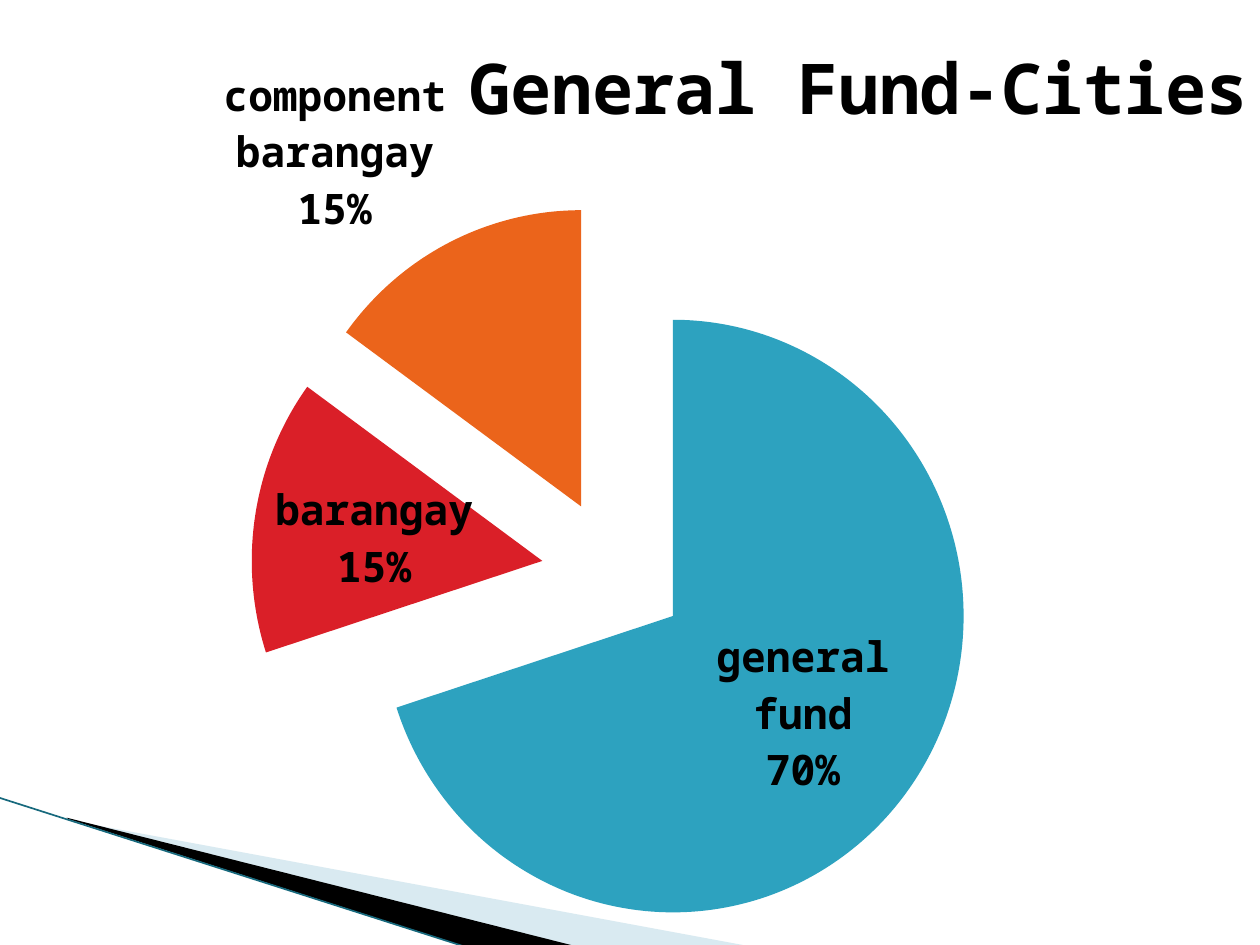
from lxml.etree import SubElement
from pptx import Presentation
from pptx.chart.data import CategoryChartData
from pptx.dml.color import RGBColor
from pptx.enum.chart import XL_CHART_TYPE, XL_LABEL_POSITION
from pptx.enum.shapes import MSO_CONNECTOR
from pptx.oxml import parse_xml
from pptx.oxml.ns import nsdecls, qn
from pptx.util import Inches, Pt

COLOURS = {"text": "000000", "pale": "A0CBDC", "dark": "000000", "edge": "17697D"}
FONT = "Noto Sans Mono"
FUNDS = [
    ("general fund", 70, "2DA2BF", XL_LABEL_POSITION.CENTER, (0.01, 0.01)),
    ("barangay", 15, "DA1F28", XL_LABEL_POSITION.CENTER, (-0.02, 0)),
    ("component barangay", 15, "EB641B", XL_LABEL_POSITION.OUTSIDE_END, None),
]


def paint(fill, colour):
    """Give a fill one solid colour."""
    fill.solid()
    fill.fore_color.rgb = RGBColor.from_string(colour)


def style_font(font, size):
    """Set the bold chart font at the given size."""
    font.name = FONT
    font.size = Pt(size)
    font.bold = True
    font.color.rgb = RGBColor.from_string(COLOURS["text"])


def add_text(frame, text, size):
    """Write text into a frame with the chart font."""
    span = frame.paragraphs[0].add_run()
    span.text = text
    style_font(span.font, size)


def set_layout(parent, index, **values):
    """Place a chart part by hand, with its layout at the given child index."""
    for old in parent.findall(qn("c:layout")):
        parent.remove(old)
    layout = parse_xml(f"<c:layout {nsdecls('c')}><c:manualLayout/></c:layout>")
    for name, value in values.items():
        SubElement(layout[0], qn(f"c:{name}")).set("val", str(value))
    parent.insert(index, layout)


def add_wedge(page, points, colour, alpha=None):
    """Draw a closed wedge through points given in inches."""
    corners = [(Inches(x), Inches(y)) for x, y in points]
    builder = page.shapes.build_freeform(*corners[0])
    builder.add_line_segments(corners[1:], close=True)
    wedge = builder.convert_to_shape()
    wedge.shadow.inherit = False
    wedge.line.fill.background()
    paint(wedge.fill, colour)
    if alpha is not None:
        shade = wedge.fill._xPr.find(f".//{qn('a:srgbClr')}")
        SubElement(shade, qn("a:alpha")).set("val", str(alpha * 1000))


def add_corner(page, left, top):
    """Draw the wedges and edge line sweeping from a left point to the slide foot."""
    pale = [(0, 0), (5.4, 1), (4.01, 1), (0, -0.01)]
    dark = [(-0.02, -0.02), (4.02, 1), (3.17, 1.01), (-0.01, -0.01)]
    for points, colour, alpha in ((pale, "pale", 40), (dark, "dark", None)):
        add_wedge(page, [(left + x, top + y) for x, y in points], COLOURS[colour], alpha)
    edge = page.shapes.add_connector(
        MSO_CONNECTOR.STRAIGHT, Inches(left - 0.56), Inches(top - 0.18),
        Inches(left + 3.16), Inches(top + 1.01))
    edge.line.width = Pt(0.95)
    edge.line.color.rgb = RGBColor.from_string(COLOURS["edge"])
    SubElement(edge._element.spPr, qn("a:effectLst"))


def style_label(label, position, offset):
    """Show category and percentage on one slice, shifted by a share of the chart."""
    style_font(label.font, 24)
    label.position = position
    element = label._get_or_add_dLbl()
    for name, shown in (("showVal", 0), ("showCatName", 1), ("showPercent", 1)):
        element.find(qn(f"c:{name}")).set("val", str(shown))
    SubElement(element, qn("c:separator")).text = "\n"
    if offset:
        set_layout(element, 1, x=offset[0], y=offset[1])


def add_fund_chart(page, left, top, width, height):
    """Add the exploded pie of city funds in the given box."""
    data = CategoryChartData()
    data.categories = [fund[0] for fund in FUNDS]
    data.add_series("Series 1", [fund[1] for fund in FUNDS])
    chart = page.shapes.add_chart(XL_CHART_TYPE.PIE_EXPLODED, left, top, width, height, data).chart
    style_font(chart.font, 10)
    chart.has_legend = False
    chart.has_title = True
    add_text(chart.chart_title.text_frame, "General Fund-Cities", 40)
    set_layout(chart.chart_title._element, 1, xMode="edge", yMode="edge", x=0.37, y=0.02)
    set_layout(chart._chartSpace.chart.plotArea, 0, layoutTarget="inner", xMode="edge",
               yMode="edge", x=0.075, y=0.214, w=0.844, h=0.784)
    plot = chart.plots[0]
    plot.vary_by_categories = True
    series = plot.series[0]
    series._element.find(qn("c:explosion")).set("val", "25")
    labels = series.data_labels
    style_font(labels.font, 24)
    labels.number_format = "0%"
    labels.number_format_is_linked = False
    labels.show_value = False
    labels.show_category_name = True
    labels.show_percentage = True
    for index, (_, _, colour, position, offset) in enumerate(FUNDS):
        point = series.points[index]
        paint(point.format.fill, colour)
        style_label(point.data_label, position, offset)


def main():
    """Build the slide and save the deck."""
    deck = Presentation()
    deck.slide_width, deck.slide_height = Inches(10), Inches(7.5)
    page = deck.slides.add_slide(deck.slide_layouts[6])
    add_corner(page, 0.55, 6.51)
    add_fund_chart(page, 0, 0, deck.slide_width, deck.slide_height)
    deck.save("out.pptx")


if __name__ == "__main__":
    main()
